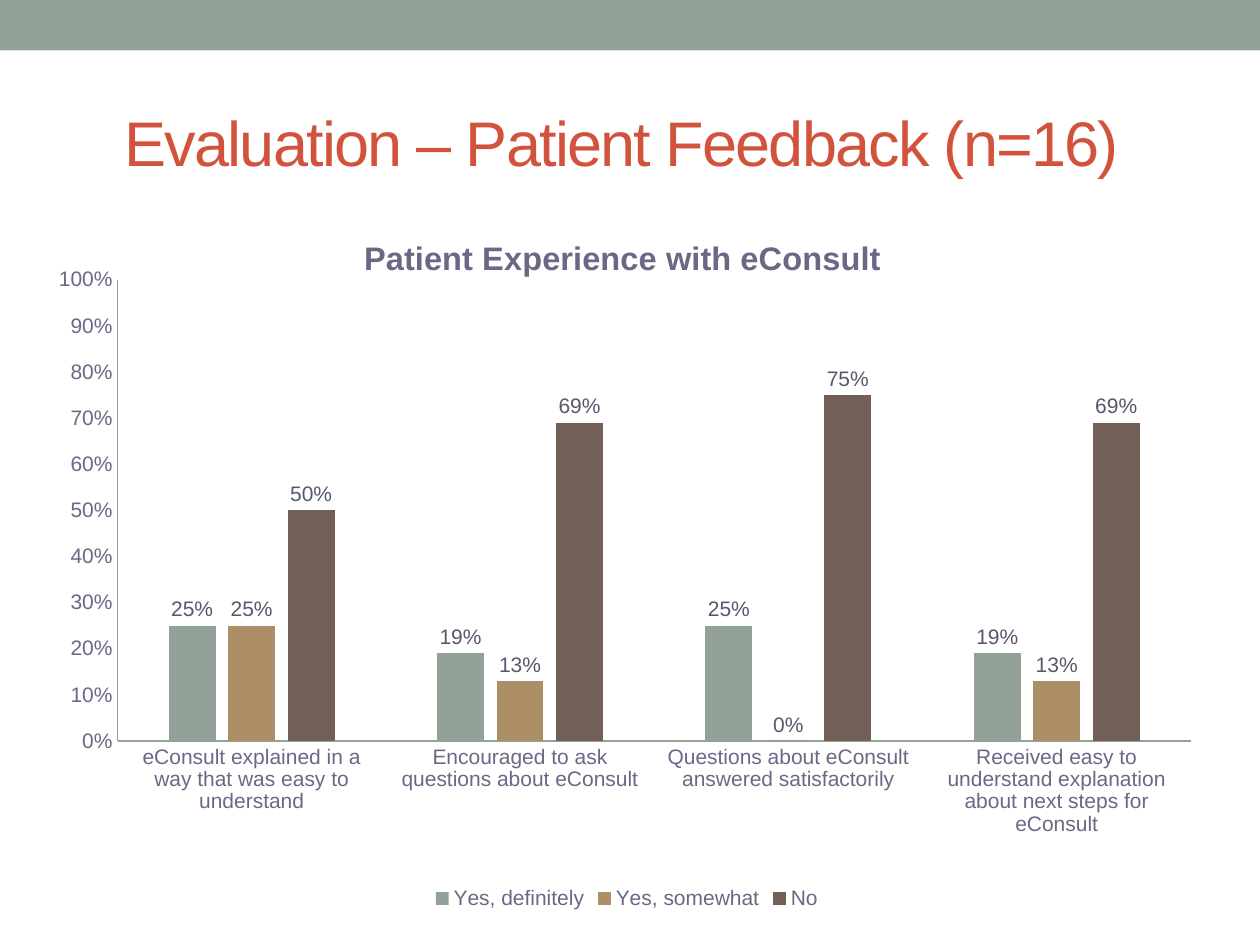
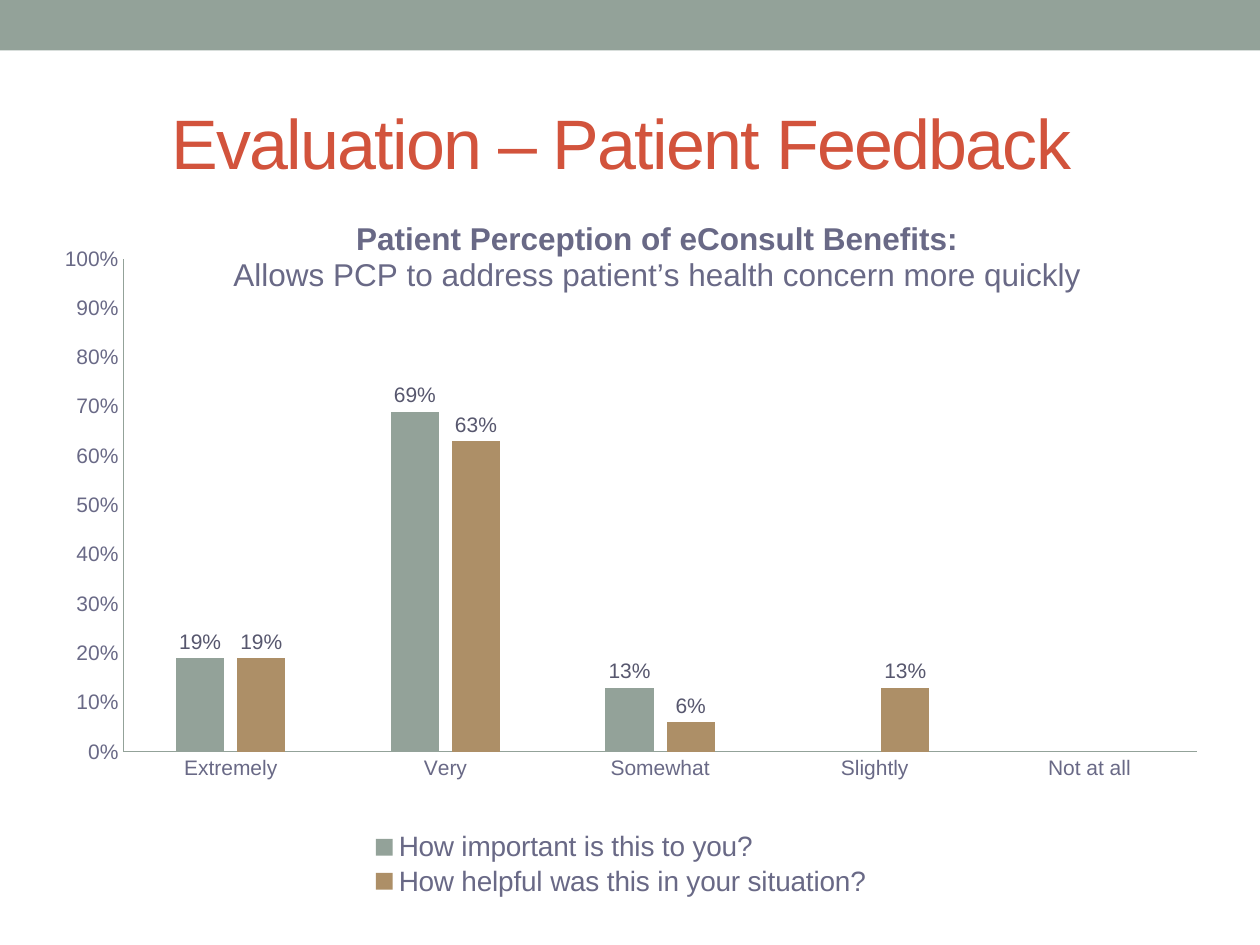
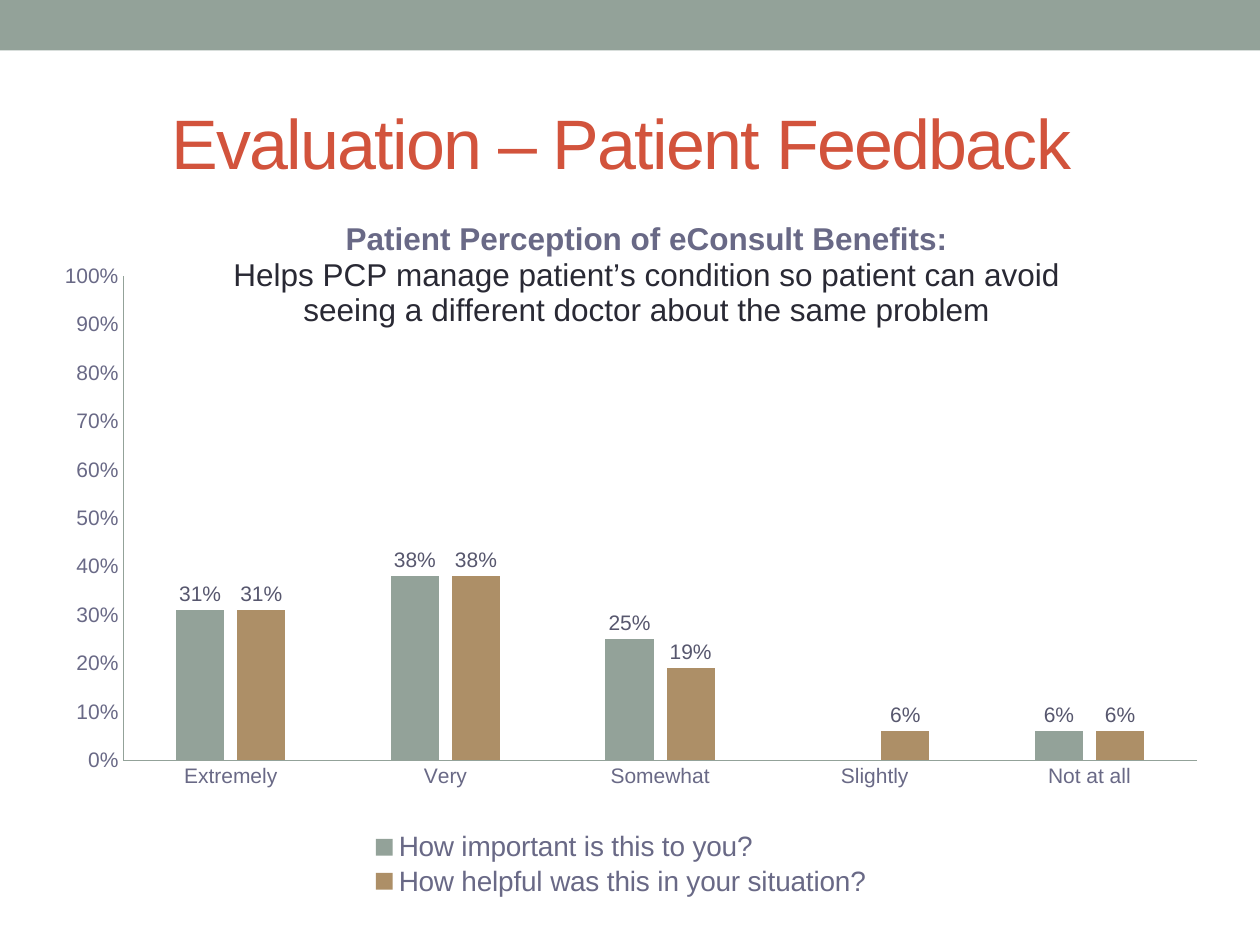
import pptx
import pptx.chart.data
import pptx.dml.color
import pptx.enum.chart
import pptx.enum.shapes
import pptx.enum.text
import pptx.oxml
import pptx.oxml.ns
import pptx.util
from dataclasses import dataclass

Inches, Pt = pptx.util.Inches, pptx.util.Pt
qn = pptx.oxml.ns.qn


@dataclass(frozen=True)
class Theme:
    font: str = "Arial"
    band: str = "93A299"
    heading: str = "D2533C"
    axis_text: str = "696986"
    label_text: str = "57576E"
    dark_text: str = "292934"
    series: tuple = ("93A299", "AD8F67", "726056")
    axis_size: float = 12
    base_size: float = 10


THEME = Theme()

# Content: values follow the order of the answers; None leaves a gap
QUESTIONS = [
    "eConsult explained in a way that was easy to understand",
    "Encouraged to ask questions about eConsult",
    "Questions about eConsult answered satisfactorily",
    "Received easy to understand explanation about next steps for eConsult",
]
RATINGS = ["Extremely", "Very", "Somewhat", "Slightly", "Not at all"]
IMPORTANT = "How important is this to you?"
HELPFUL = "How helpful was this in your situation?"
BENEFITS = ("Patient Perception of eConsult Benefits:", True, THEME.axis_text)
BENEFIT_STYLE = {
    "heading": ("Evaluation – Patient Feedback ", 40),
    "answers": RATINGS,
    "caption_size": 18,
    "legend_size": 16,
    "legend_area": (0.27, 0.88, 0.45, 0.1),
}

SLIDES = [
    {
        "heading": ("Evaluation – Patient Feedback (n=16) ", 36),
        "answers": QUESTIONS,
        "caption": [("Patient Experience with eConsult", True, THEME.axis_text)],
        "caption_size": 18.6,
        "caption_at": (0.27, 0.05),
        "plot_area": (0.064, 0.119, 0.919, 0.64),
        "legend_size": 12,
        "legend_area": None,
        "shares": {
            "Yes, definitely": (0.25, 0.19, 0.25, 0.19),
            "Yes, somewhat": (0.25, 0.13, 0, 0.13),
            "No": (0.5, 0.69, 0.75, 0.69),
        },
    },
    {
        **BENEFIT_STYLE,
        "caption": [
            BENEFITS,
            ("Allows PCP to address patient’s health concern more quickly",
             False, THEME.axis_text),
        ],
        "caption_at": (0.16, 0.03),
        "plot_area": (0.069, 0.09, 0.919, 0.684),
        "shares": {
            IMPORTANT: (0.19, 0.69, 0.13, None, None),
            HELPFUL: (0.19, 0.63, 0.06, 0.13, None),
        },
    },
    {
        **BENEFIT_STYLE,
        "caption": [
            BENEFITS,
            ("Helps PCP manage patient’s condition so patient can avoid "
             "seeing a different doctor about the same problem",
             False, THEME.dark_text),
        ],
        "caption_at": (0.16, 0.03),
        "plot_area": (0.069, 0.114, 0.919, 0.672),
        "shares": {
            IMPORTANT: (0.31, 0.38, 0.25, None, 0.06),
            HELPFUL: (0.31, 0.38, 0.19, 0.06, 0.06),
        },
    },
]


def rgb(value):
    return pptx.dml.color.RGBColor.from_string(value)


def style_font(font, size, color, bold=False):
    font.name, font.size, font.bold = THEME.font, Pt(size), bold
    font.color.rgb = rgb(color)


def set_layout(parent, area, inner=False):
    """Place a chart part by fractions of the chart: x, y and maybe w, h."""
    for old in parent.findall(qn("c:layout")):
        parent.remove(old)
    target = '<c:layoutTarget val="inner"/>' if inner else ""
    keys = "xywh"[:len(area)]
    modes = "".join(f'<c:{k}Mode val="edge"/>' for k in keys if k in "xy")
    sizes = "".join(f'<c:{k} val="{v}"/>' for k, v in zip(keys, area))
    layout = pptx.oxml.parse_xml(
        f'<c:layout {pptx.oxml.ns.nsdecls("c")}><c:manualLayout>'
        f"{target}{modes}{sizes}</c:manualLayout></c:layout>")
    overlay = parent.find(qn("c:overlay"))
    if overlay is None:
        parent.insert(0, layout)
    else:
        overlay.addprevious(layout)


def add_band(slide):
    band = slide.shapes.add_shape(
        pptx.enum.shapes.MSO_SHAPE.RECTANGLE, 0, 0, Inches(10), Inches(0.4))
    band.shadow.inherit = False
    band.fill.solid()
    band.fill.fore_color.rgb = rgb(THEME.band)
    band.line.fill.background()


def add_heading(slide, text, size):
    frame = slide.shapes.add_textbox(
        Inches(0.5), Inches(0.58), Inches(9), Inches(1.08)).text_frame
    frame.word_wrap = True
    frame.vertical_anchor = pptx.enum.text.MSO_ANCHOR.MIDDLE
    line = frame.paragraphs[0]
    line.alignment = pptx.enum.text.PP_ALIGN.CENTER
    run = line.add_run()
    run.text = text
    style_font(run.font, size, THEME.heading)
    run.font._element.set("spc", "-100")


def add_caption(chart, lines, size, at):
    chart.has_title = True
    frame = chart.chart_title.text_frame
    for i, (text, bold, color) in enumerate(lines):
        line = frame.add_paragraph() if i else frame.paragraphs[0]
        line.alignment = pptx.enum.text.PP_ALIGN.CENTER
        run = line.add_run()
        run.text = text
        style_font(run.font, size, color, bold)
    set_layout(chart.chart_title._element, at)


def style_axes(chart):
    for axis in (chart.category_axis, chart.value_axis):
        axis.has_major_gridlines = False
        axis.major_tick_mark = pptx.enum.chart.XL_TICK_MARK.NONE
        axis.minor_tick_mark = pptx.enum.chart.XL_TICK_MARK.NONE
        style_font(axis.tick_labels.font, THEME.axis_size, THEME.axis_text)
        axis.format.line.color.rgb = rgb(THEME.band)
        axis.format.line.width = Pt(0.75)
    shares = chart.value_axis
    shares.minimum_scale, shares.maximum_scale, shares.major_unit = 0, 1, 0.1
    shares.tick_labels.number_format = "0%"
    shares.tick_labels.number_format_is_linked = False


def style_bars(chart):
    plot = chart.plots[0]
    plot.gap_width, plot.overlap = 219, -27
    plot.vary_by_categories = False
    for bars, color in zip(plot.series, THEME.series):
        bars.format.fill.solid()
        bars.format.fill.fore_color.rgb = rgb(color)
        bars.invert_if_negative = False
        labels = bars.data_labels
        labels.show_value = True
        labels.position = pptx.enum.chart.XL_LABEL_POSITION.OUTSIDE_END
        labels.number_format, labels.number_format_is_linked = "0%", False
        style_font(labels.font, THEME.axis_size, THEME.label_text)


def add_feedback_chart(slide, content):
    data = pptx.chart.data.CategoryChartData(number_format="0%")
    data.categories = content["answers"]
    for name, shares in content["shares"].items():
        data.add_series(name, shares)
    chart = slide.shapes.add_chart(
        pptx.enum.chart.XL_CHART_TYPE.COLUMN_CLUSTERED,
        Inches(0.34), Inches(1.54), Inches(9.27), Inches(5.72), data).chart
    style_font(chart.font, THEME.base_size, THEME.dark_text)
    add_caption(chart, content["caption"], content["caption_size"],
                content["caption_at"])
    style_axes(chart)
    style_bars(chart)
    set_layout(chart._chartSpace.chart.plotArea, content["plot_area"], inner=True)

    # Legend
    chart.has_legend = True
    legend = chart.legend
    legend.position = pptx.enum.chart.XL_LEGEND_POSITION.BOTTOM
    legend.include_in_layout = False
    style_font(legend.font, content["legend_size"], THEME.axis_text)
    if content["legend_area"]:
        set_layout(legend._element, content["legend_area"])


def main():
    deck = pptx.Presentation()
    deck.slide_width, deck.slide_height = Inches(10), Inches(7.5)
    for content in SLIDES:
        slide = deck.slides.add_slide(deck.slide_layouts[6])
        add_band(slide)
        add_heading(slide, *content["heading"])
        add_feedback_chart(slide, content)
    deck.save("out.pptx")


if __name__ == "__main__":
    main()
